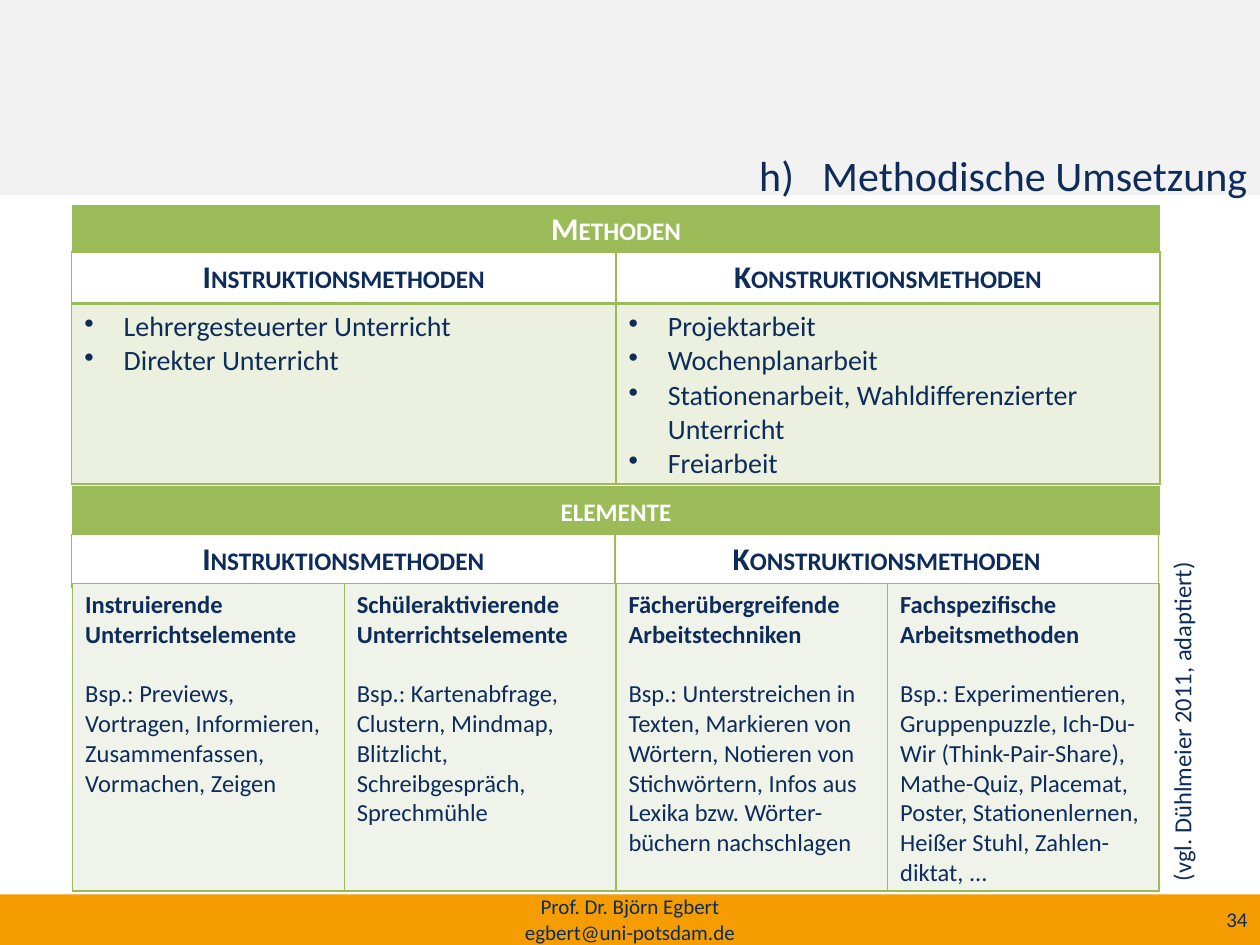
from lxml.etree import SubElement
from pptx import Presentation
from pptx.dml.color import RGBColor
from pptx.enum.shapes import MSO_SHAPE
from pptx.enum.text import MSO_ANCHOR, MSO_AUTO_SIZE, PP_ALIGN
from pptx.oxml.ns import qn
from pptx.util import Pt

NAVY = RGBColor(0x0D, 0x2C, 0x5A)
GREEN = RGBColor(0x9B, 0xBB, 0x59)
LIME = RGBColor(0xEB, 0xF1, 0xDE)
PALE = RGBColor(0xEF, 0xF3, 0xEA)
GREY = RGBColor(0xF2, 0xF2, 0xF2)
AMBER = RGBColor(0xF5, 0x9C, 0x00)
WHITE = RGBColor(0xFF, 0xFF, 0xFF)

HEADS = ["Instruktionsmethoden", "Konstruktionsmethoden"]
LISTS = [
    ["Lehrergesteuerter Unterricht", "Direkter Unterricht"],
    ["Projektarbeit", "Wochenplanarbeit",
     "Stationenarbeit, Wahldifferenzierter Unterricht", "Freiarbeit"],
]
PARTS = [
    ("Instruierende Unterrichtselemente",
     "Bsp.: Previews, Vortragen, Informieren, Zusammenfassen, Vormachen, Zeigen"),
    ("Schüleraktivierende Unterrichtselemente",
     "Bsp.: Kartenabfrage, Clustern, Mindmap, Blitzlicht, Schreibgespräch, Sprechmühle"),
    ("Fächerübergreifende Arbeitstechniken",
     "Bsp.: Unterstreichen in Texten, Markieren von Wörtern, Notieren von "
     "Stichwörtern, Infos aus Lexika bzw. Wörter-büchern nachschlagen"),
    ("Fachspezifische Arbeitsmethoden",
     "Bsp.: Experimentieren, Gruppenpuzzle, Ich-Du-Wir (Think-Pair-Share), Mathe-Quiz, "
     "Placemat, Poster, Stationenlernen, Heißer Stuhl, Zahlen-diktat, ..."),
]


def style(font, color=NAVY, **form):
    for key, val in {"name": "Calibri", "bold": False, **form}.items():
        setattr(font, key, val)
    font.color.rgb = color


def write(frame, lines, align=PP_ALIGN.LEFT, **form):
    for num, line in enumerate(lines):
        para = frame.paragraphs[0] if num == 0 else frame.add_paragraph()
        para.alignment = align
        run = para.add_run()
        run.text = line
        style(run.font, **form)


def mark(para, dent, tag, **attrs):
    props = para._p.get_or_add_pPr()
    props.set("marL", str(Pt(dent)))
    props.set("indent", str(-Pt(dent)))
    SubElement(props, qn(tag), attrs)


def band(slide, top, high, color):
    rect = slide.shapes.add_shape(MSO_SHAPE.RECTANGLE, 0, Pt(top), Pt(720), Pt(high))
    rect.shadow.inherit = False
    rect.fill.solid()
    rect.fill.fore_color.rgb = color
    rect.line.fill.background()


def label(slide, left, top, wide, high, lines, **form):
    box = slide.shapes.add_textbox(Pt(left), Pt(top), Pt(wide), Pt(high))
    box.text_frame.word_wrap = True
    box.text_frame.vertical_anchor = MSO_ANCHOR.MIDDLE
    write(box.text_frame, lines, **form)
    return box


def edge(cell, color, base):
    props = cell._tc.get_or_add_tcPr()
    for side in "LRTB":
        wide = base if side == "B" else 1
        line = SubElement(props, qn("a:ln" + side), w=str(Pt(wide)))
        fill = SubElement(line, qn("a:solidFill"))
        SubElement(fill, qn("a:srgbClr"), val=str(color))


def grid(slide, left, top, wide, cols, highs):
    frame = slide.shapes.add_table(
        len(highs), cols, Pt(left), Pt(top), Pt(wide), Pt(sum(highs)))
    table = frame.table
    table.first_row = table.horz_banding = False
    for row, high in zip(table.rows, highs):
        row.height = Pt(high)
    return table


def paint(cell, fill=None, line=GREEN, base=1):
    edge(cell, line, base)
    if fill is None:
        cell.fill.background()
    else:
        cell.fill.solid()
        cell.fill.fore_color.rgb = fill


def head(cell, text, color=NAVY, **look):
    paint(cell, **look)
    write(cell.text_frame, [text], PP_ALIGN.CENTER, color=color, size=Pt(18), bold=True)
    run = cell.text_frame.paragraphs[0].runs[0]
    run._r.get_or_add_rPr().set("cap", "small")


def banner(slide, top, text):
    table = grid(slide, 40.5, top, 623, 1, [29.5])
    head(table.cell(0, 0), text, WHITE, fill=GREEN, line=WHITE, base=3)


def split(slide, top, wide, highs):
    table = grid(slide, 41, top, wide, 2, highs)
    for col, text in enumerate(HEADS):
        head(table.cell(0, col), text, base=2)
    return table


def methods(slide):
    banner(slide, 116.5, "Methoden")
    table = split(slide, 144, 622, [29.5, 103])
    for col, items in enumerate(LISTS):
        cell = table.cell(1, col)
        paint(cell, LIME)
        write(cell.text_frame, items, size=Pt(16))
        for para in cell.text_frame.paragraphs:
            mark(para, 22.5, "a:buChar", char="•")


def parts(slide):
    banner(slide, 277.5, "elemente")
    split(slide, 305.5, 621, [29.5])
    table = grid(slide, 41.5, 333.5, 621, 4, [175])
    for col, lines in enumerate(PARTS):
        cell = table.cell(0, col)
        paint(cell, PALE)
        write(cell.text_frame, lines, size=Pt(14))
        name, body = cell.text_frame.paragraphs
        name.runs[0].font.bold = True
        body.space_before = Pt(17)


def heading(slide):
    title = slide.shapes.title
    spot = {"left": 99.5, "top": 82, "width": 620.5, "height": 35.5}
    for key, val in spot.items():
        setattr(title, key, Pt(val))
    frame = title.text_frame
    frame.auto_size = MSO_AUTO_SIZE.NONE
    frame.vertical_anchor = MSO_ANCHOR.TOP
    write(frame, ["Methodische Umsetzung"], PP_ALIGN.RIGHT, size=Pt(24))
    mark(frame.paragraphs[0], 36, "a:buAutoNum", type="alphaLcParenR", startAt="8")
    slide.shapes._spTree.append(title._element)


def main():
    deck = Presentation()
    deck.slide_width, deck.slide_height = Pt(720), Pt(540)
    slide = deck.slides.add_slide(deck.slide_layouts[5])
    band(slide, 0, 111.5, GREY)
    band(slide, 511, 29, AMBER)
    label(slide, 547, 510.5, 173, 29, ["34"], align=PP_ALIGN.RIGHT, size=Pt(12))
    label(slide, 238.5, 510.5, 243, 29.5,
          ["Prof. Dr. Björn Egbert", "egbert@uni-potsdam.de"],
          align=PP_ALIGN.CENTER, size=Pt(12))
    cite = label(slide, 573, 396, 204.5, 24.5,
                 ["(vgl. Dühlmeier 2011, adaptiert)"], size=Pt(14))
    cite.rotation = 270
    methods(slide)
    parts(slide)
    heading(slide)
    deck.save("out.pptx")


if __name__ == "__main__":
    main()
